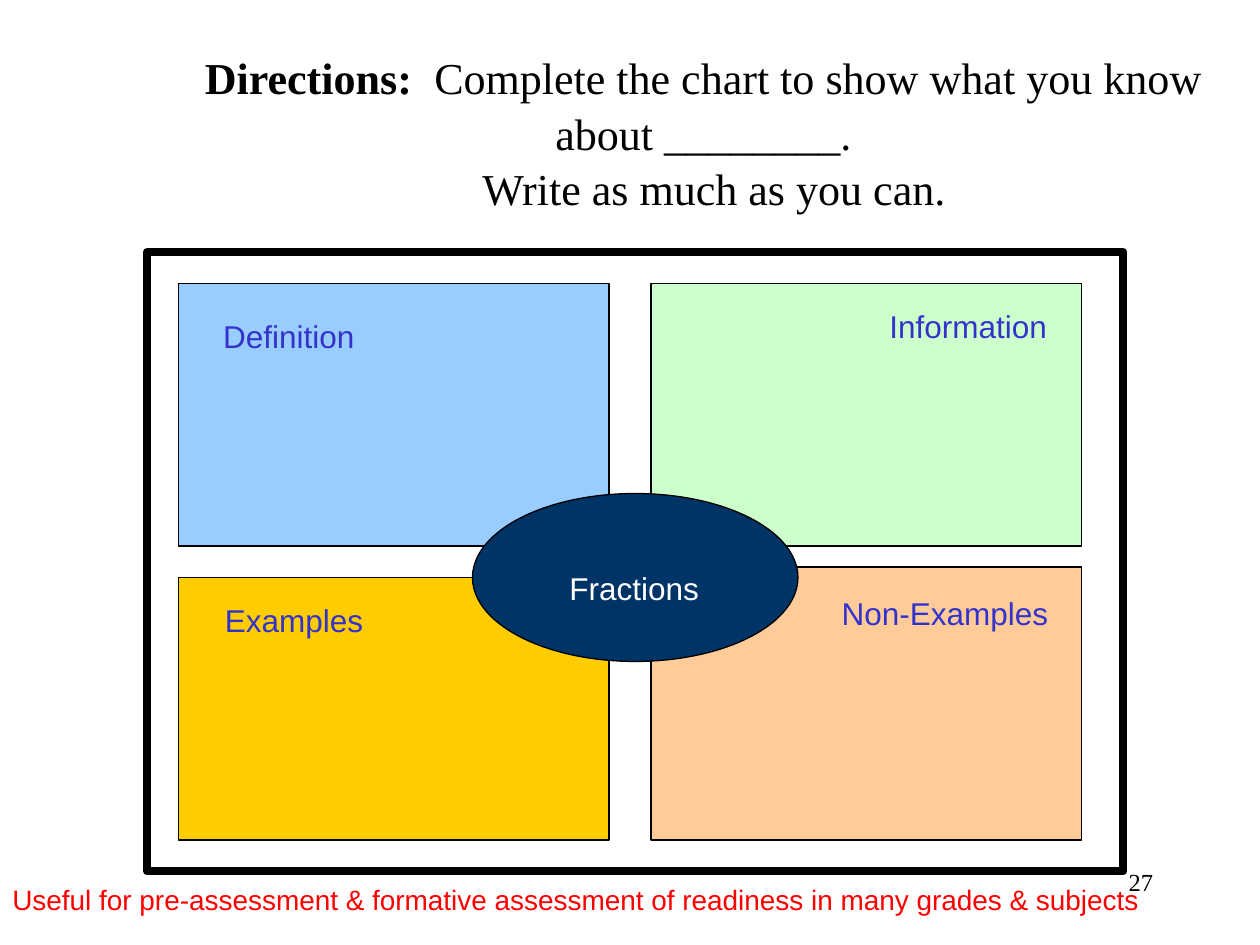
"""Build a four-box concept chart slide on a grid of 120 columns by 90 rows."""
from pptx import Presentation
from pptx.dml.color import RGBColor as RGB
from pptx.enum.shapes import MSO_SHAPE as Shape
from pptx.enum.text import MSO_ANCHOR as Anchor, PP_ALIGN as Align
from pptx.util import Inches, Pt

THEME = {
    "ink": "000000", "label": "3333CC", "light": "FFFFFF", "note": "FF0000",
    "definition": "99CCFF", "examples": "FFCC00", "nonexamples": "FFCC99",
    "information": "CCFFCC", "topic": "003366",
    "serif": "Times New Roman", "sans": "Arial",
    "title": 25.2, "body": 18, "footer": 16, "number": 14,
    "thin": 0.75, "thick": 4.5,
}

prs = Presentation()
prs.slide_width, prs.slide_height = Inches(10), Inches(7.5)
s = prs.slides.add_slide(prs.slide_layouts[5])
UNIT = prs.slide_width / 120


def grid(*cells):
    return [round(cell * UNIT) for cell in cells]


def style(r, face, size, color, bold=False):
    values = {"name": THEME[face], "size": Pt(THEME[size]), "bold": bold}
    for name, value in values.items():
        setattr(r.font, name, value)
    r.font.color.rgb = RGB.from_string(THEME[color])


title = s.shapes.title
title.left, title.top, title.width, title.height = grid(16, 6, 102, 13)
tf = title.text_frame
tf.word_wrap, tf.vertical_anchor = True, Anchor.MIDDLE
p = tf.paragraphs[0]
p.alignment, p.line_spacing = Align.CENTER, 1.05
lines = ["  Complete the chart to show what you know about ________.",
         "  Write as much as you can."]
for i, (text, bold) in enumerate([("Directions:", True), (lines[0], False), (lines[1], False)]):
    if i == 2:
        p.add_line_break()
    r = p.add_run()
    r.text = text
    style(r, "serif", "title", "ink", bold)

shapes = [
    (Shape.RECTANGLE, (17, 27, 41, 25), "definition", "thin"),
    (Shape.RECTANGLE, (17, 55, 41, 25), "examples", "thin"),
    (Shape.RECTANGLE, (62, 54, 41, 26), "nonexamples", "thin"),
    (Shape.RECTANGLE, (62, 27, 41, 25), "information", "thin"),
    (Shape.OVAL, (45, 47, 31, 16), "topic", "thin"),
    (Shape.RECTANGLE, (14, 24, 93, 59), None, "thick"),
]
for kind, cells, fill, weight in shapes:
    sp = s.shapes.add_shape(kind, *grid(*cells))
    sp.shadow.inherit = False
    if fill:
        sp.fill.solid()
        sp.fill.fore_color.rgb = RGB.from_string(THEME[fill])
    else:
        sp.fill.background()
    sp.line.color.rgb = RGB.from_string(THEME["ink"])
    sp.line.width = Pt(THEME[weight])

texts = [
    ("27", (86, 82, 25, 6), Align.RIGHT, Anchor.TOP, "serif", "number", "ink"),
    ("Definition", (18, 29, 19, 6), Align.CENTER, Anchor.MIDDLE, "sans", "body", "label"),
    ("Information", (81, 28, 22.4, 6), Align.CENTER, Anchor.MIDDLE, "sans", "body", "label"),
    ("Examples", (18, 56, 20, 6), Align.CENTER, Anchor.MIDDLE, "sans", "body", "label"),
    ("Non-Examples", (76, 56, 25, 18), Align.RIGHT, Anchor.TOP, "sans", "body", "label"),
    ("Fractions", (50.2, 53, 20.4, 6), Align.CENTER, Anchor.MIDDLE, "sans", "body", "light"),
    ("Useful for pre-assessment & formative assessment of readiness in many grades & subjects",
     (0, 83.5, 120, 4.4), Align.LEFT, Anchor.TOP, "sans", "footer", "note"),
]
for text, cells, align, anchor, face, size, color in texts:
    tf = s.shapes.add_textbox(*grid(*cells)).text_frame
    tf.word_wrap, tf.vertical_anchor = True, anchor
    p = tf.paragraphs[0]
    p.alignment = align
    r = p.add_run()
    r.text = text
    style(r, face, size, color)

prs.save("out.pptx")
